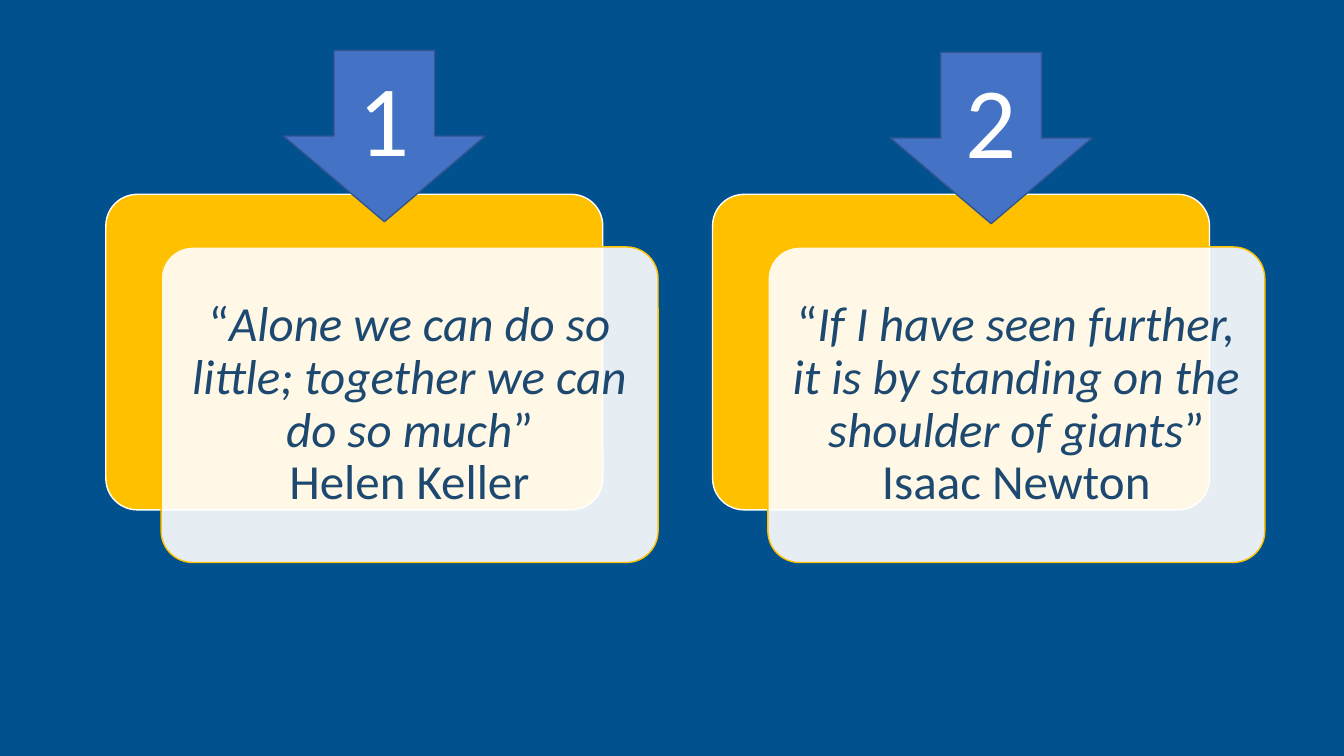
from lxml.etree import SubElement
from pptx import Presentation
from pptx.dml.color import RGBColor
from pptx.enum.shapes import MSO_SHAPE
from pptx.enum.text import MSO_ANCHOR, PP_ALIGN
from pptx.oxml.ns import qn
from pptx.util import Pt

QUOTES = [
    ("1", "Alone we can do so little; together we can do so much", "Helen Keller", 36),
    ("2", "If I have seen further, it is by standing on the shoulder of giants", "Isaac Newton", 37.4),
]

NAVY = RGBColor(0x00, 0x51, 0x8E)
GOLD = RGBColor(0xFF, 0xC0, 0x00)
WHITE = RGBColor(0xFF, 0xFF, 0xFF)
INK = RGBColor(0x1D, 0x49, 0x71)
BLUE = RGBColor(0x44, 0x72, 0xC4)
BLUE_EDGE = RGBColor(0x32, 0x54, 0x91)

FONT = "Calibri"
FIRST_LEFT, CARD_TOP, COLUMN_STEP = 75.6, 138.8, 433.4
CARD_WIDTH, CARD_HEIGHT = 355, 225.4
FRONT_RIGHT, FRONT_DOWN = 39.5, 37.6
ARROW_OFFSET, ARROW_WIDTH, ARROW_HEIGHT = 127, 144, 122.4
CARD_MARGIN = 10.8


def add_outlined_shape(slide, kind, left, top, width, height, fill, line):
    shape = slide.shapes.add_shape(kind, Pt(left), Pt(top), Pt(width), Pt(height))
    shape.shadow.inherit = False
    shape.fill.solid()
    shape.fill.fore_color.rgb = fill
    shape.line.color.rgb = line
    shape.line.width = Pt(1)
    return shape


def add_card(slide, left, top, fill, line):
    card = add_outlined_shape(slide, MSO_SHAPE.ROUNDED_RECTANGLE, left, top,
                              CARD_WIDTH, CARD_HEIGHT, fill, line)
    card.adjustments[0] = 0.1
    return card


def set_opacity(shape, percent):
    color = shape.fill._xPr.find(qn("a:solidFill"))[0]
    SubElement(color, qn("a:alpha")).set("val", str(percent * 1000))


def format_paragraph(paragraph, size, color):
    paragraph.alignment = PP_ALIGN.CENTER
    paragraph.font.name = FONT
    paragraph.font.size = Pt(size)
    paragraph.font.color.rgb = color


def write_quote(card, quote, author):
    frame = card.text_frame
    frame.word_wrap = True
    frame.vertical_anchor = MSO_ANCHOR.MIDDLE
    frame.margin_left = frame.margin_right = Pt(CARD_MARGIN)
    frame.margin_top = frame.margin_bottom = Pt(CARD_MARGIN)
    paragraph = frame.paragraphs[0]
    format_paragraph(paragraph, 35, INK)
    paragraph.line_spacing = 0.9
    paragraph.add_run().text = "“"
    words = paragraph.add_run()
    words.text = quote
    words.font.italic = True
    paragraph.add_run().text = "”"
    paragraph.add_line_break()
    paragraph.add_run().text = author


def write_number(arrow, number):
    frame = arrow.text_frame
    frame.vertical_anchor = MSO_ANCHOR.TOP
    paragraph = frame.paragraphs[0]
    paragraph.text = number
    format_paragraph(paragraph, 72, WHITE)


def main():
    presentation = Presentation()
    presentation.slide_width, presentation.slide_height = Pt(960), Pt(540)
    slide = presentation.slides.add_slide(presentation.slide_layouts[6])
    slide.background.fill.solid()
    slide.background.fill.fore_color.rgb = NAVY

    for column, (number, quote, author, arrow_top) in enumerate(QUOTES):
        left = FIRST_LEFT + column * COLUMN_STEP
        add_card(slide, left, CARD_TOP, GOLD, WHITE)
        front = add_card(slide, left + FRONT_RIGHT, CARD_TOP + FRONT_DOWN, WHITE, GOLD)
        set_opacity(front, 90)
        write_quote(front, quote, author)
        arrow = add_outlined_shape(slide, MSO_SHAPE.DOWN_ARROW, left + ARROW_OFFSET,
                                   arrow_top, ARROW_WIDTH, ARROW_HEIGHT, BLUE, BLUE_EDGE)
        write_number(arrow, number)

    presentation.save("out.pptx")


if __name__ == "__main__":
    main()
